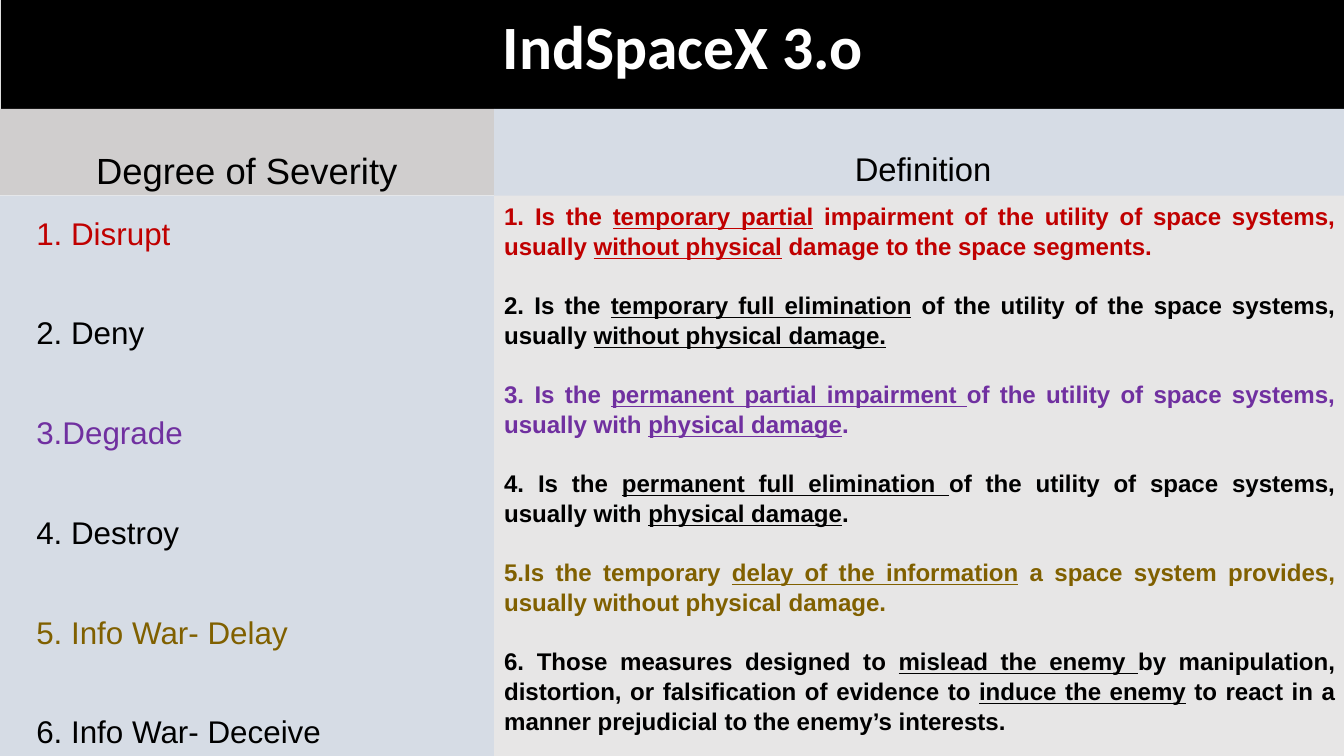
from lxml import etree
from pptx import Presentation, util as u
from pptx.dml.color import RGBColor
from pptx.enum import text
from pptx.oxml import ns

BLACK = RGBColor(0x00, 0x00, 0x00)
WHITE = RGBColor(0xFF, 0xFF, 0xFF)
RED = RGBColor(0xC0, 0x00, 0x00)
PURPLE = RGBColor(0x70, 0x30, 0xA0)
OLIVE = RGBColor(0x80, 0x60, 0x00)
GREY = RGBColor(0xD0, 0xCE, 0xCE)
PALE_GREY = RGBColor(0xE7, 0xE6, 0xE6)
PALE_BLUE = RGBColor(0xD6, 0xDC, 0xE5)

COMPARISON_LAYOUT = 4
SPLIT = 4.9
HEAD_TOP = 1.08
LIST_TOP = 1.94
LIST_HEIGHT = 7.5 - LIST_TOP

# Degree, definition with underlined parts between underscores, colour
DEGREES = [
    ("1. Disrupt",
     "1. Is the _temporary partial_ impairment of the utility of space systems, "
     "usually _without physical_ damage to the space segments.", RED),
    ("2. Deny",
     "2. Is the _temporary full elimination_ of the utility of the space systems, "
     "usually _without physical damage._", BLACK),
    ("3.Degrade",
     "3. Is the _permanent partial impairment _of the utility of space systems, "
     "usually with _physical damage_.", PURPLE),
    ("4. Destroy",
     "4. Is the _permanent full elimination _of the utility of space systems, "
     "usually with _physical damage_.", BLACK),
    ("5. Info War- Delay",
     "5.Is the temporary _delay of the information_ a space system provides, "
     "usually without physical damage.", OLIVE),
    ("6. Info War- Deceive",
     "6. Those measures designed to _mislead the enemy _by manipulation, "
     "distortion, or falsification of evidence to _induce the enemy_ to react "
     "in a manner prejudicial to the enemy’s interests.", BLACK),
]


class SeverityPage:
    font = "Arial"
    title_font = "Calibri"

    def __init__(self, deck):
        self.page = deck.slides.add_slide(deck.slide_layouts[COMPARISON_LAYOUT])

    def panel(self, index, area, fill, anchor):
        """Place and fill the placeholder with this index; return its text frame."""
        box = self.page.placeholders[index]
        box.left, box.top, box.width, box.height = map(u.Inches, area)
        box.fill.solid()
        box.fill.fore_color.rgb = fill
        frame = box.text_frame
        frame.word_wrap = True
        frame.auto_size = text.MSO_AUTO_SIZE.NONE
        frame.vertical_anchor = anchor
        return frame

    def style(self, para, size, colour, bold=False, font=None):
        for span in para.runs:
            span.font.name = font or self.font
            span.font.size = u.Pt(size)
            span.font.bold = bold
            span.font.color.rgb = colour

    def title(self, wording, area):
        frame = self.panel(0, area, BLACK, text.MSO_ANCHOR.MIDDLE)
        frame.margin_left = u.Inches(0.24)
        frame.text = wording
        para = frame.paragraphs[0]
        para.alignment = text.PP_ALIGN.CENTER
        para.line_spacing = 0.9
        self.style(para, 44, WHITE, True, self.title_font)

    def heading(self, index, wording, area, fill, size, bottom=0.05):
        frame = self.panel(index, area, fill, text.MSO_ANCHOR.BOTTOM)
        frame.margin_bottom = u.Inches(bottom)
        frame.text = wording
        para = frame.paragraphs[0]
        para.alignment = text.PP_ALIGN.CENTER
        para.line_spacing = 0.7
        self.style(para, size, BLACK)

    def listing(self, index, items, area, fill, size, spacing, gap,
                align=text.PP_ALIGN.LEFT, indent=0, bold=False):
        """Write (wording, colour) items; underscores enclose underlined parts."""
        frame = self.panel(index, area, fill, text.MSO_ANCHOR.TOP)
        frame.margin_left = u.Inches(0.1 + indent)
        for number, (wording, colour) in enumerate(items):
            para = frame.add_paragraph() if number else frame.paragraphs[0]
            para.alignment = align
            para.line_spacing = spacing
            para.space_before = u.Pt(0)
            para.space_after = u.Pt(gap)
            for part, words in enumerate(wording.split("_")):
                if words:
                    span = para.add_run()
                    span.text = words
                    span.font.underline = part % 2 == 1
            self.style(para, size, colour, bold)
            props = para._p.get_or_add_pPr()
            props.set("marL", "0")
            props.set("indent", "0")
            etree.SubElement(props, ns.qn("a:buNone"))


def main():
    deck = Presentation()
    deck.slide_width, deck.slide_height = u.Inches(13.33), u.Inches(7.5)
    page = SeverityPage(deck)
    page.title("IndSpaceX 3.o", (0.01, -0.09, 13.39, 1.17))
    page.heading(1, "Degree of Severity", (0, HEAD_TOP, SPLIT, 0.86), GREY, 26)
    page.listing(2, [(degree, colour) for degree, _, colour in DEGREES],
                 (0, LIST_TOP, SPLIT, LIST_HEIGHT), PALE_BLUE,
                 size=22.4, spacing=1.35, gap=35, indent=0.26)
    page.heading(3, "Definition", (SPLIT, HEAD_TOP, 8.51, 0.92), PALE_BLUE,
                 23.4, bottom=0.14)
    page.listing(4, [(meaning, colour) for _, meaning, colour in DEGREES],
                 (SPLIT, LIST_TOP, 8.44, LIST_HEIGHT), PALE_GREY,
                 size=17.2, spacing=1.04, gap=20.6,
                 align=text.PP_ALIGN.JUSTIFY, bold=True)
    deck.save("out.pptx")


if __name__ == "__main__":
    main()
